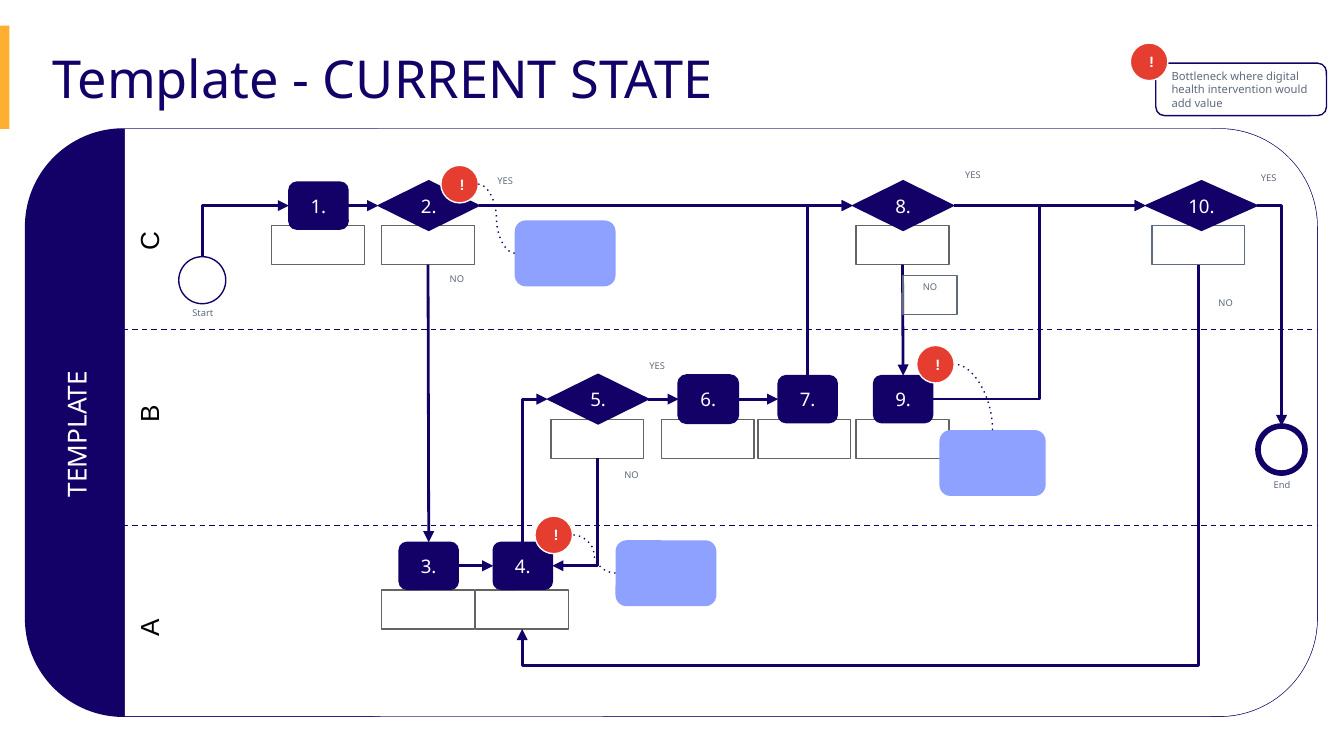
from pptx import Presentation
from pptx import util as u
from pptx.dml.color import RGBColor
from pptx.enum import dml, shapes, text
from pptx.oxml import xmlchemy

NAVY, SLATE, GRAY, WHITE = "130168", "5F6A7D", "646464", "FFFFFF"
PERIWINKLE, RED, ORANGE = "8EA1FF", "E53E30", "FEAF31"
FORM = shapes.MSO_SHAPE
LINK = shapes.MSO_CONNECTOR
TOP, LEFT, BOTTOM, RIGHT = range(4)


def rgb(value):
    """Turn a hex string into a colour."""
    return RGBColor.from_string(value)


def write(shape, words, size=10, font="Noto Sans", color=WHITE, bold=False,
          align=text.PP_ALIGN.CENTER, anchor=text.MSO_ANCHOR.MIDDLE):
    """Put formatted text into a shape."""
    frame = shape.text_frame
    frame.word_wrap = True
    frame.vertical_anchor = anchor
    frame.margin_left = frame.margin_right = u.Inches(0.1)
    frame.margin_top = frame.margin_bottom = u.Inches(0.1)
    paragraph = frame.paragraphs[0]
    paragraph.alignment = align
    run = paragraph.add_run()
    run.text = words
    run.font.size, run.font.name, run.font.bold = u.Pt(size), font, bold
    run.font.color.rgb = rgb(color)


def draw(slide, form, x, y, w, h, fill=None, line=None, weight=0.75):
    """Add a flat preset shape."""
    shape = slide.shapes.add_shape(form, *map(u.Inches, (x, y, w, h)))
    shape.shadow.inherit = False
    if fill:
        shape.fill.solid()
        shape.fill.fore_color.rgb = rgb(fill)
    else:
        shape.fill.background()
    if line:
        shape.line.color.rgb = rgb(line)
        shape.line.width = u.Pt(weight)
    else:
        shape.line.fill.background()
    return shape


def label(slide, words, x, y, w, h, rotation=0, **style):
    """Add a text box."""
    box = slide.shapes.add_textbox(*map(u.Inches, (x, y, w, h)))
    box.rotation = rotation
    write(box, words, **style)


def site(shape, side):
    """Return the middle of one side of a shape."""
    across, down = ((0.5, 0), (0, 0.5), (0.5, 1), (1, 0.5))[side]
    return (shape.left + int(shape.width * across),
            shape.top + int(shape.height * down))


def stroke(connector, weight=1.5, dash=None, arrow=True):
    """Format a connector as a flat navy line."""
    connector.line.color.rgb = rgb(NAVY)
    connector.line.width = u.Pt(weight)
    if dash:
        connector.line.dash_style = dml.MSO_LINE.DASH
        connector._element.xpath(".//a:prstDash")[0].set("val", dash)
    if arrow:
        tail = xmlchemy.OxmlElement("a:tailEnd")
        tail.set("type", "triangle")
        connector.line._get_or_add_ln().append(tail)
    connector._element.spPr.append(xmlchemy.OxmlElement("a:effectLst"))


def join(slide, start, start_side, finish, finish_side):
    """Join two shapes with a straight arrow."""
    arrow = slide.shapes.add_connector(
        LINK.STRAIGHT, *site(start, start_side), *site(finish, finish_side))
    arrow.begin_connect(start, start_side)
    arrow.end_connect(finish, finish_side)
    stroke(arrow)


def route(slide, begin, end, preset, vertical=False, bend=None, **style):
    """Draw a bent or curved line that leaves sideways or vertically."""
    (x1, y1), (x2, y2) = begin, end
    turn = 0
    if vertical:
        down = y2 > y1
        turn = 90 if down else 270
        middle_x, middle_y = (x1 + x2) // 2, (y1 + y2) // 2
        half_w, half_h = abs(y2 - y1) // 2, abs(x2 - x1) // 2
        if down == (x2 > x1):
            half_h = -half_h
        x1, x2 = middle_x - half_w, middle_x + half_w
        y1, y2 = middle_y - half_h, middle_y + half_h
    kind = LINK.CURVE if preset.startswith("curved") else LINK.ELBOW
    connector = slide.shapes.add_connector(kind, x1, y1, x2, y2)
    properties = connector._element.spPr
    if turn:
        properties.xfrm.set("rot", str(turn * 60000))
    geometry = properties.xpath("a:prstGeom")[0]
    geometry.set("prst", preset)
    if bend:
        guide = xmlchemy.OxmlElement("a:gd")
        guide.set("name", "adj1")
        guide.set("fmla", f"val {int(bend * 100000)}")
        geometry.xpath("a:avLst")[0].append(guide)
    stroke(connector, **style)


def badge(slide, x, y):
    """Draw a bottleneck mark."""
    mark = draw(slide, FORM.OVAL, x, y, 0.28, 0.28, RED, WHITE)
    write(mark, "!", size=8, font="Arial", bold=True)
    return mark


def heading(slide, x, y):
    """Place the accent bar and the title."""
    draw(slide, FORM.RECTANGLE, x, y, 0.07, 0.77, ORANGE)
    label(slide, "Template - CURRENT STATE", x + 0.29, y + 0.05, 6.75, 0.68,
          size=28, color=NAVY, align=text.PP_ALIGN.LEFT)


def legend(slide, x, y):
    """Place the key for the bottleneck mark."""
    note = draw(slide, FORM.ROUNDED_RECTANGLE, x + 0.19, y + 0.15, 1.27, 0.39, line=NAVY)
    write(note, "Bottleneck where digital health intervention would add value",
          size=6, color=SLATE, align=text.PP_ALIGN.LEFT)
    badge(slide, x, y)


def swimlanes(slide, x, y, w, h):
    """Draw the pool with its three lanes."""
    draw(slide, FORM.ROUNDED_RECTANGLE, x, y, w, h, NAVY, NAVY)
    draw(slide, FORM.RECTANGLE, x + 0.74, y, 8.08, h, WHITE)
    draw(slide, FORM.ROUNDED_RECTANGLE, x + 1.92, y, w - 1.92, h, WHITE)
    for divider in (1.49, 2.95):
        line = slide.shapes.add_connector(
            LINK.STRAIGHT, *map(u.Inches, (x + 0.65, y + divider, x + w, y + divider)))
        stroke(line, 0.75, "dash", arrow=False)
    for name, across, middle, length, font, color in (
            ("C", 0.92, 0.83, 1.46, "Arial", "000000"),
            ("B", 0.92, 2.12, 0.82, "Arial", "000000"),
            ("A", 0.92, 3.71, 1.17, "Arial", "000000"),
            ("TEMPLATE", 0.38, 2.27, 1.92, "Noto Sans", WHITE)):
        label(slide, name, x + across - length / 2, y + middle - 0.22, length, 0.44,
              rotation=270, size=14, font=font, color=color, anchor=text.MSO_ANCHOR.TOP)


def flow(slide, x, y):
    """Place the steps, their captions, the arrows and the callouts."""
    lanes = {"C": (0.57, 0.15), "B": (2.01, 0.15), "A": (3.25, 0.18)}
    steps = {1: (2.18, "C"), 2: (3, "C"), 3: (3, "A"), 4: (3.7, "A"), 5: (4.26, "B"),
             6: (5.08, "B"), 7: (5.82, "B"), 8: (6.53, "C"), 9: (6.53, "B"), 10: (8.75, "C")}
    decisions = {2: 0.75, 5: 0.75, 8: 0.75, 10: 0.83}
    node, caption = {}, {}
    for number, (center, lane) in steps.items():
        row, drop = lanes[lane]
        shift = 0.02 if number in (7, 10) else 0
        caption[number] = draw(slide, FORM.RECTANGLE, x + center - shift - 0.35, y + row + drop,
                               0.69, 0.29, line=SLATE if number == 10 else GRAY)
        form, w, h = FORM.ROUNDED_RECTANGLE, 0.44, 0.35
        if number in decisions:
            form, w, h = FORM.DIAMOND, decisions[number], 0.37
        node[number] = draw(slide, form, x + center - w / 2, y + row - h / 2, w, h,
                            NAVY, NAVY, 1.5 if number == 6 else 0.75)
        write(node[number], f"{number}.")
    start = draw(slide, FORM.OVAL, x + 1.14, y + 0.95, 0.35, 0.35, line=NAVY)
    end = draw(slide, FORM.OVAL, x + 9.17, y + 2.21, 0.35, 0.35, line=NAVY, weight=3)

    for first, second in ((1, 2), (2, 8), (8, 10), (3, 4), (5, 6), (6, 7)):
        join(slide, node[first], RIGHT, node[second], LEFT)
    for first, second in ((2, 3), (8, 9)):
        join(slide, caption[first], BOTTOM, node[second], TOP)
    for begin, finish in (
            (site(start, TOP), site(node[1], LEFT)),
            (site(node[4], TOP), site(node[5], LEFT)),
            (site(caption[5], BOTTOM), site(node[4], RIGHT)),
            (site(node[7], TOP), site(node[8], LEFT))):
        route(slide, begin, finish, "bentConnector2", vertical=True)
    route(slide, site(node[10], RIGHT), site(end, TOP), "bentConnector2")
    route(slide, site(node[9], RIGHT), site(node[10], LEFT), "bentConnector3")
    route(slide, site(caption[10], BOTTOM), site(caption[4], BOTTOM),
          "bentConnector3", vertical=True, bend=1.1)

    draw(slide, FORM.RECTANGLE, x + 6.53, y + 1.09, 0.4, 0.29, line=SLATE)
    for words, left, top in (
            ("Start", 1.12, 1.28), ("End", 9.15, 2.56), ("YES", 3.37, 0.3), ("NO", 3.01, 1.03),
            ("YES", 9.05, 0.28), ("YES", 6.85, 0.26), ("YES", 4.5, 1.68), ("NO", 4.31, 2.49),
            ("NO", 6.53, 1.09), ("NO", 8.73, 1.21)):
        label(slide, words, x + left, y + top, 0.4, 0.29, size=5, color=SLATE,
              anchor=text.MSO_ANCHOR.TOP)

    for left, top, w, mark_left, mark_top, side in (
            (3.64, 0.68, 0.75, 3.09, 0.27, LEFT),
            (6.8, 2.24, 0.79, 6.63, 1.61, TOP),
            (4.39, 3.06, 0.75, 3.79, 2.88, LEFT)):
        callout = draw(slide, FORM.ROUNDED_RECTANGLE, x + left, y + top, w, 0.49, PERIWINKLE)
        mark = badge(slide, x + mark_left, y + mark_top)
        route(slide, site(callout, side), site(mark, RIGHT),
              "curvedConnector2" if side == TOP else "curvedConnector3", vertical=side == TOP,
              weight=0.75, dash="dot", arrow=False)


def main():
    """Build and save the slide."""
    deck = Presentation()
    deck.slide_width = u.Inches(10)
    deck.slide_height = deck.slide_width * 9 // 16
    slide = deck.slides.add_slide(deck.slide_layouts[6])
    heading(slide, 0, 0.19)
    swimlanes(slide, 0.19, 0.96, 9.61, 4.37)
    flow(slide, 0.19, 0.96)
    legend(slide, 8.41, 0.32)
    deck.save("out.pptx")


if __name__ == "__main__":
    main()
